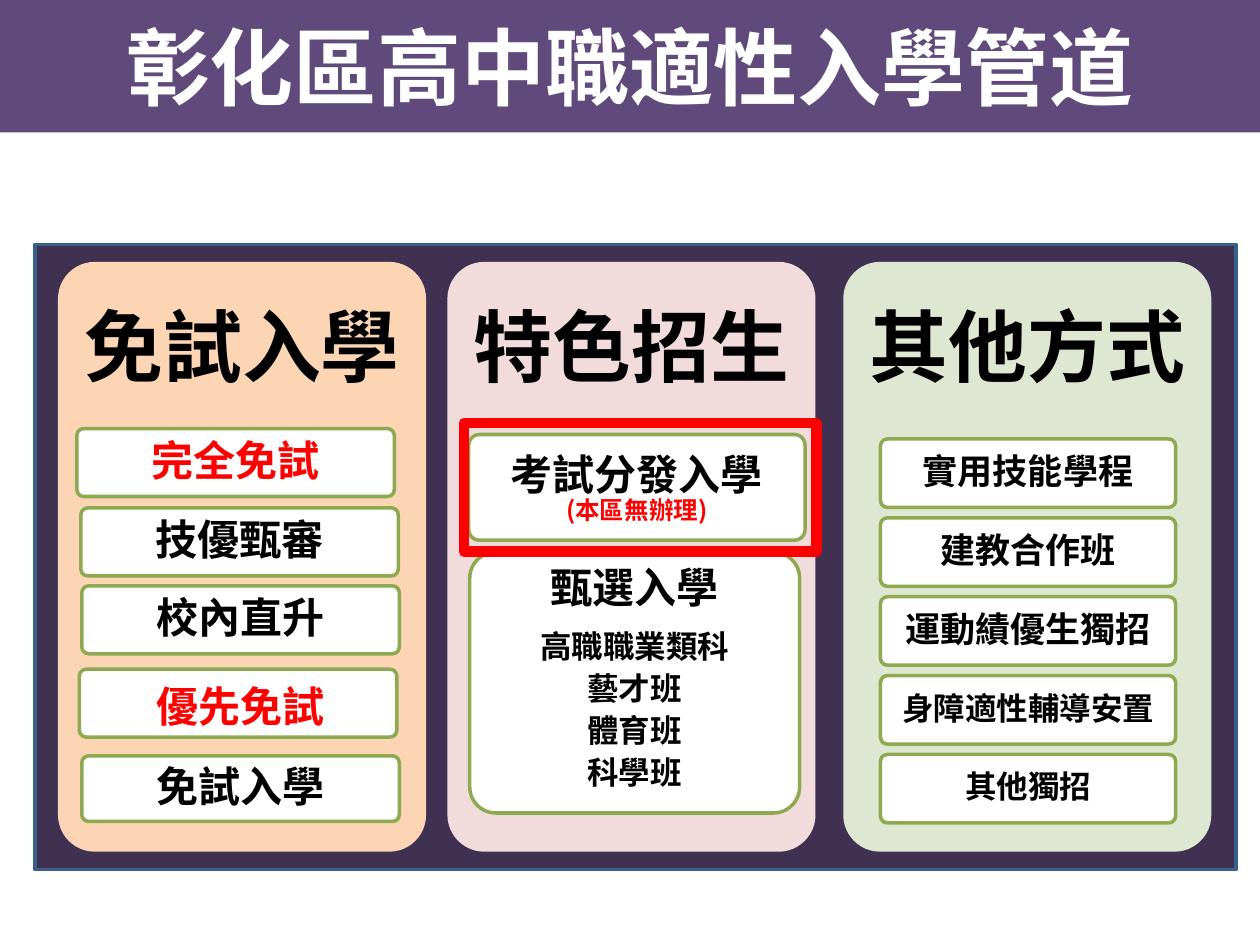
from lxml.etree import SubElement
from pptx import Presentation
from pptx.dml.color import RGBColor
from pptx.enum.shapes import MSO_SHAPE as Shape
from pptx.enum.text import MSO_ANCHOR as Anchor, MSO_AUTO_SIZE as AutoSize, PP_ALIGN as Align
from pptx.oxml.ns import qn
from pptx.util import Cm, Pt

FONT = "Noto Sans CJK SC"
GREEN, RED, BLACK, WHITE = "8DAA51", "FF0000", "000000", "FFFFFF"
color = RGBColor.from_string
CORNER = 0.1

prs = Presentation()
prs.slide_width, prs.slide_height = Cm(25.4), Cm(19.05)
slide = prs.slides.add_slide(prs.slide_layouts[5])


def draw(kind, at, fill=None, line=None, width=2):
    shape = slide.shapes.add_shape(kind, *map(Cm, at))
    shape.shadow.inherit = False
    if kind == Shape.ROUNDED_RECTANGLE:
        shape.adjustments[0] = CORNER
    if fill:
        shape.fill.solid()
        shape.fill.fore_color.rgb = color(fill)
    else:
        shape.fill.background()
    if line:
        shape.line.color.rgb = color(line)
        shape.line.width = Pt(width)
    else:
        shape.line.fill.background()
    return shape


def write(shape, lines, insets, anchor=Anchor.MIDDLE):
    frame = shape.text_frame
    left, top, right, bottom = map(Cm, insets)
    frame_format = {
        "word_wrap": True, "auto_size": AutoSize.NONE, "vertical_anchor": anchor,
        "margin_left": left, "margin_top": top,
        "margin_right": right, "margin_bottom": bottom,
    }
    for name, value in frame_format.items():
        setattr(frame, name, value)
    for index, (text, size, ink, spacing, after) in enumerate(lines):
        paragraph = frame.add_paragraph() if index else frame.paragraphs[0]
        paragraph_format = {
            "alignment": Align.CENTER, "line_spacing": spacing,
            "space_before": Pt(0), "space_after": Pt(after),
        }
        for name, value in paragraph_format.items():
            setattr(paragraph, name, value)
        run = paragraph.add_run()
        run.text = text
        for name, value in {"size": Pt(size), "bold": True, "name": FONT}.items():
            setattr(run.font, name, value)
        run.font.color.rgb = color(ink)
        SubElement(run.font._element, qn("a:ea"), typeface=FONT)


title = slide.shapes.title
title_place = {"left": Cm(0), "top": Cm(0), "width": Cm(25.4), "height": Cm(2.67)}
for name, value in title_place.items():
    setattr(title, name, value)
title.fill.solid()
title.fill.fore_color.rgb = color("604A7B")
write(title, [("彰化區高中職適性入學管道", 48, WHITE, 1.0, 0)], (0.25, 0.13, 0.25, 0.13))

draw(Shape.RECTANGLE, (0.71, 4.93, 24.21, 12.6), "403152", "3A5F8C")

columns = [
    ("免試入學", 1.17, "FCD5B5"),
    ("特色招生", 9.02, "F2DCDB"),
    ("其他方式", 17.0, "DEE7D1"),
]
for heading, left, fill in columns:
    column = draw(Shape.ROUNDED_RECTANGLE, (left, 5.28, 7.42, 11.89), fill)
    write(column, [(heading, 45, BLACK, 0.9, 15.75)], (0.26, 0.26, 0.26, 8.57))

exam_free = [
    ("完全免試", 1.55, 8.64, 1.37, RED),
    ("技優甄審", 1.63, 10.24, 1.37, BLACK),
    ("校內直升", 1.65, 11.81, 1.37, BLACK),
    ("免試入學", 1.65, 15.24, 1.32, BLACK),
]
for label, left, top, height, ink in exam_free:
    option = draw(Shape.ROUNDED_RECTANGLE, (left, top, 6.4, height), WHITE, GREEN)
    write(option, [(label, 24, ink, 0.9, 8.4)], (0.16, 0.14, 0.16, 0.14))

draw(Shape.ROUNDED_RECTANGLE, (1.6, 13.49, 6.4, 1.37), WHITE, GREEN)
priority = slide.shapes.add_textbox(Cm(1.68), Cm(13.72), Cm(6.32), Cm(1.14))
write(priority, [("優先免試", 24, RED, 0.9, 8.4)], (0.18, 0.13, 0.18, 0.13))

exam = draw(Shape.ROUNDED_RECTANGLE, (9.45, 8.76, 6.78, 2.13), WHITE, GREEN)
exam_lines = [("考試分發入學", 24, BLACK, 0.9, 8.4), ("(本區無辦理)", 14, RED, 0.2, 4.9)]
write(exam, exam_lines, (0.14, 0.12, 0.14, 0.12))

selection = draw(Shape.ROUNDED_RECTANGLE, (9.47, 11.13, 6.65, 5.26), WHITE, GREEN)
classes = ["高職職業類科", "藝才班", "體育班", "科學班"]
selection_lines = [("甄選入學", 24, BLACK, 0.9, 6)]
selection_lines += [(label, 18, BLACK, Pt(24), 0) for label in classes]
write(selection, selection_lines, (0.18, 0.15, 0.18, 0.15), Anchor.TOP)

other_ways = [
    ("實用技能學程", 20), ("建教合作班", 20), ("運動績優生獨招", 20),
    ("身障適性輔導安置", 18), ("其他獨招", 18),
]
for row, (label, size) in enumerate(other_ways):
    way = draw(Shape.ROUNDED_RECTANGLE, (17.75, 8.85 + 1.59 * row, 5.95, 1.38), WHITE, GREEN)
    write(way, [(label, size, BLACK, 0.9, size * 0.35)], (0.14, 0.1, 0.14, 0.1))

draw(Shape.RECTANGLE, (9.35, 8.53, 7.11, 2.59), line=RED, width=6)

prs.save("out.pptx")
